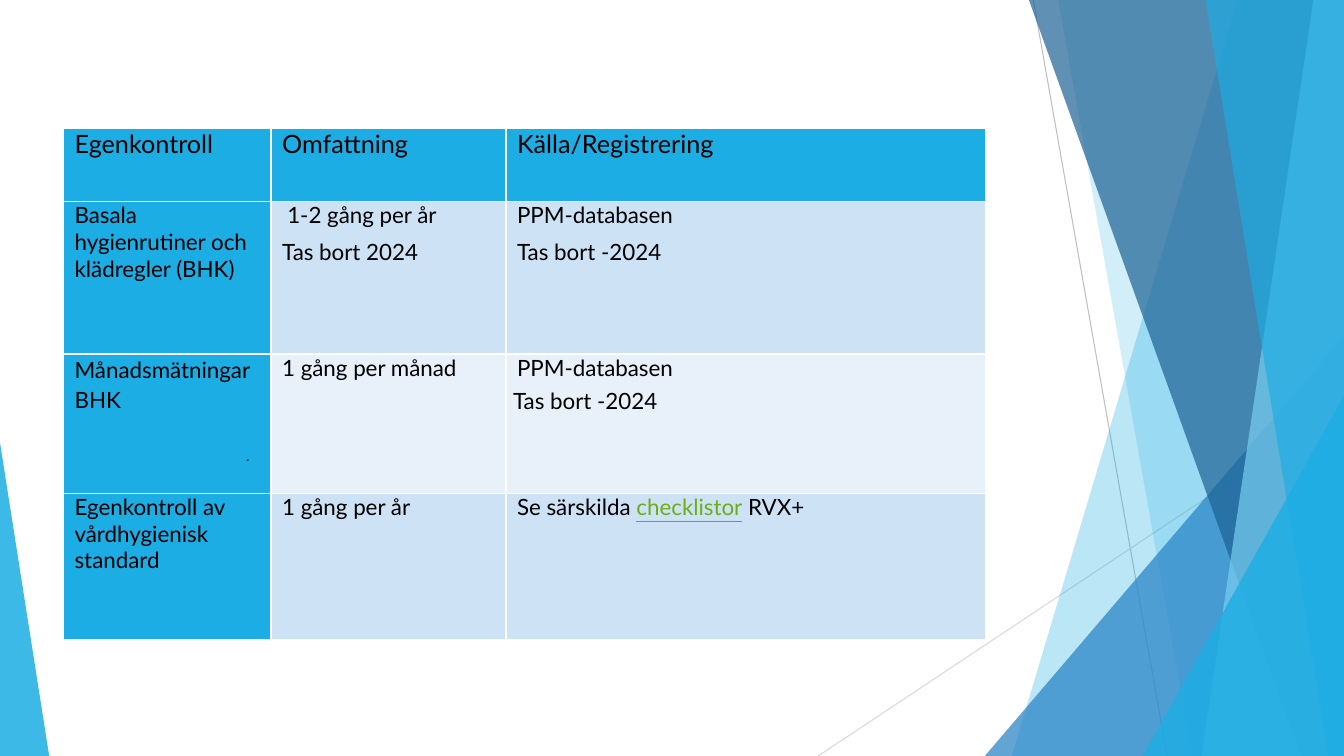
"""Build the slide with the table of hygiene self-checks."""
from lxml.etree import SubElement
from pptx import Presentation
from pptx.dml.color import RGBColor
from pptx.enum.shapes import MSO_CONNECTOR, MSO_SHAPE
from pptx.enum.text import MSO_ANCHOR
from pptx.oxml.ns import qn
from pptx.util import Cm, Pt


def color(hex_string):
    return RGBColor.from_string(hex_string)


def paint(shape, hex_string, opacity):
    shape.shadow.inherit = False
    shape.fill.solid()
    shape.fill.fore_color.rgb = color(hex_string)
    shape.line.fill.background()
    fill_color = shape.element.spPr.find(f"{qn('a:solidFill')}/{qn('a:srgbClr')}")
    SubElement(fill_color, qn("a:alpha"), val=str(opacity * 1000))


WIDTH, HEIGHT = 33.87, 19.05
BLUE, DARK_BAND, LIGHT_BAND = "1CADE4", "CDE3F5", "E8F1FA"

presentation = Presentation()
presentation.slide_width, presentation.slide_height = Cm(WIDTH), Cm(HEIGHT)
slide = presentation.slides.add_slide(presentation.slide_layouts[6])
shapes = slide.shapes

for start_x, start_y, end_x, line_color in [
    (26.04, 0, 29.41, "BFBFBF"),
    (WIDTH, 10.24, 20.62, "D9D9D9"),
]:
    connector = shapes.add_connector(
        MSO_CONNECTOR.STRAIGHT, Cm(start_x), Cm(start_y), Cm(end_x), Cm(HEIGHT))
    connector.line.color.rgb = color(line_color)
    connector.line.width = Pt(0.75)
    SubElement(connector.element.spPr, qn("a:effectLst"))

decorations = [
    ("band", (31.19, 25.5), BLUE, 30),
    ("band", (26.67, 30.05), BLUE, 20),
    ("triangle", (24.82, 8.46, 9.05, 1), "2683C6", 72),
    ("band", (25.93, 32.79), "1D6294", 70),
    ("band", (33.1, 30.28), "77CEEF", 70),
    ("band", (30.38, 33.48), BLUE, 65),
    ("triangle", (28.8, 9.98, 5.07, 1), BLUE, 80),
    ("triangle", (0, 11.15, 1.24, 0), BLUE, 85),
]
for kind, geometry, fill_color, opacity in decorations:
    if kind == "band":
        top_x, bottom_x = geometry
        builder = shapes.build_freeform(Cm(top_x), 0)
        builder.add_line_segments([
            (Cm(WIDTH), 0), (Cm(WIDTH), Cm(HEIGHT)), (Cm(bottom_x), Cm(HEIGHT))])
        shape = builder.convert_to_shape()
    else:
        left, top, width, apex = geometry
        shape = shapes.add_shape(
            MSO_SHAPE.ISOSCELES_TRIANGLE, Cm(left), Cm(top), Cm(width), Cm(HEIGHT - top))
        shape.adjustments[0] = apex
    paint(shape, fill_color, opacity)

rows = [
    [["Egenkontroll"], ["Omfattning"], ["Källa/Registrering"]],
    [["Basala hygienrutiner och klädregler (BHK)"],
     ["1-2 gång per år", "Tas bort 2024"],
     ["PPM-databasen", "Tas bort -2024"]],
    [["Månadsmätningar BHK"], ["1 gång per månad"], ["PPM-databasen", "Tas bort -2024"]],
    [["Egenkontroll av vårdhygienisk standard"], ["1 gång per år"],
     ["Se särskilda |checklistor| RVX+"]],
]
column_widths = [5.23, 5.92, 12.09]
row_heights = [1.85, 3.84, 3.51, 3.68]
paragraph_format = {"space_before": Pt(2), "space_after": Pt(5)}
special_formats = {
    (1, 1, 0): {"indent": 0.23},
    (2, 0, 0): {"space_before": Pt(1), "line_spacing": 1.1},
    (2, 2, 1): {"indent": 0, "space_before": Pt(0), "space_after": Pt(0)},
}
cell_format = {"margin_left": Cm(0.18), "margin_right": Cm(0.18),
               "margin_top": 0, "margin_bottom": 0}

table = shapes.add_table(
    len(rows), len(column_widths), Cm(1.6), Cm(3.23),
    Cm(sum(column_widths)), Cm(sum(row_heights))).table
table.first_row = table.horz_banding = False
for column, width in zip(table.columns, column_widths):
    column.width = Cm(width)
for row, height in zip(table.rows, row_heights):
    row.height = Cm(height)

for row_index, row_texts in enumerate(rows):
    for column_index, texts in enumerate(row_texts):
        cell = table.cell(row_index, column_index)
        for name, value in cell_format.items():
            setattr(cell, name, value)
        cell_properties = cell._tc.get_or_add_tcPr()
        for side in ("lnL", "lnR", "lnT", "lnB"):
            border = SubElement(cell_properties, qn(f"a:{side}"), w=str(Pt(1)))
            border_fill = SubElement(border, qn("a:solidFill"))
            SubElement(border_fill, qn("a:srgbClr"), val="FFFFFF")
        cell.fill.solid()
        is_heading = row_index == 0 or column_index == 0
        band = DARK_BAND if row_index % 2 else LIGHT_BAND
        cell.fill.fore_color.rgb = color(BLUE if is_heading else band)

        for paragraph_index, text in enumerate(texts):
            frame = cell.text_frame
            paragraph = frame.add_paragraph() if paragraph_index else frame.paragraphs[0]
            special = special_formats.get((row_index, column_index, paragraph_index), {})
            settings = {"indent": 0.1} | paragraph_format | special
            indent = Cm(settings.pop("indent"))
            paragraph._p.get_or_add_pPr().set("marL", str(indent))
            for name, value in settings.items():
                setattr(paragraph, name, value)
            for part_index, part in enumerate(text.split("|")):
                run = paragraph.add_run()
                run.text = part
                is_marked = part_index == 1
                font_format = {"name": "Lato", "size": Pt(16 if row_index else 18),
                               "bold": False, "underline": is_marked}
                for name, value in font_format.items():
                    setattr(run.font, name, value)
                run.font.color.rgb = color("6EAC1C" if is_marked else "000000")

dot_box = shapes.add_textbox(Cm(5.94), Cm(11.1), Cm(22.4), Cm(0.74))
dot_box.text_frame.word_wrap = True
dot_box.text_frame.vertical_anchor = MSO_ANCHOR.MIDDLE
dot = dot_box.text_frame.paragraphs[0].add_run()
dot.text = "."
for name, value in {"name": "Arial", "size": Pt(11)}.items():
    setattr(dot.font, name, value)
dot.font.color.rgb = color("000000")

presentation.save("out.pptx")
